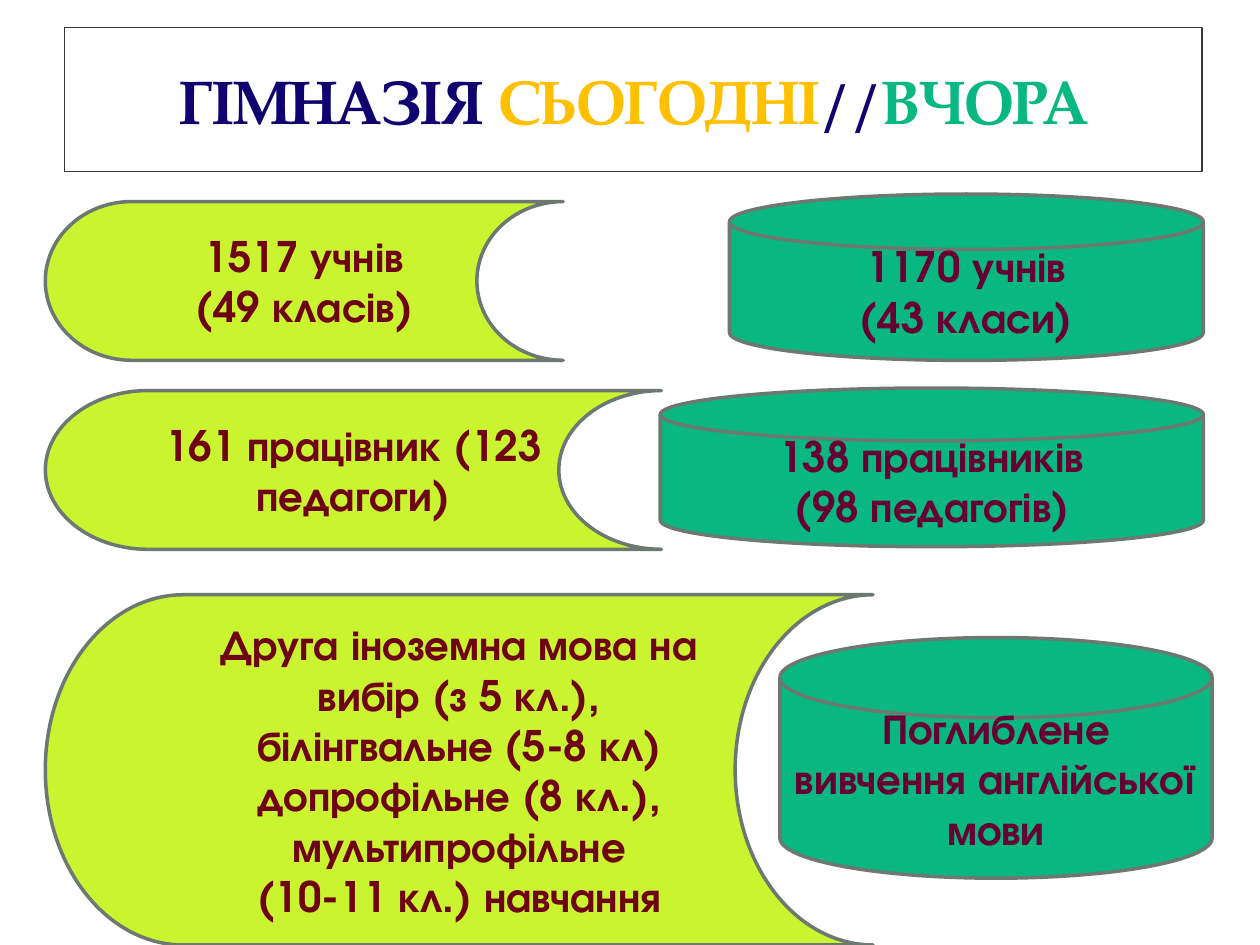
from dataclasses import dataclass

from pptx import Presentation
from pptx.dml.color import RGBColor
from pptx.enum.shapes import MSO_SHAPE
from pptx.enum.text import MSO_ANCHOR, MSO_AUTO_SIZE, PP_ALIGN
from pptx.util import Inches, Pt

TITLE_ONLY = 5


@dataclass(frozen=True)
class Theme:
    title_font: str = "TeX Gyre Pagella"
    body_font: str = "TeX Gyre Adventor"
    title_size: float = 35
    body_size: float = 24
    frame_width: float = 0.75
    outline_width: float = 2
    white: str = "FFFFFF"
    frame: str = "3C3638"
    outline: str = "6D7871"
    navy: str = "10036F"
    gold: str = "FFC000"
    green: str = "09B781"
    lime: str = "CAF430"
    maroon: str = "6E0413"
    plum: str = "660033"


THEME = Theme()

# Column edges in inches: "today" starts at the left, "yesterday" ends at the right
LEFT_EDGE = 0.36
RIGHT_EDGE = 9.55

# Each entry: top, width, height, paragraphs
TODAY = [
    (1.6, 4.11, 1.26, ["1517 учнів", "(49 класів)"]),
    (3.1, 4.89, 1.26, ["161 працівник (123 педагоги)"]),
    (4.72, 6.57, 2.78, [
        "Друга іноземна мова на вибір (з 5 кл.), білінгвальне (5-8 кл)",
        "допрофільне (8 кл.), мультипрофільне",
        "(10-11 кл.) навчання",
    ]),
]
YESTERDAY = [
    (1.54, 3.76, 1.32, ["1170 учнів", "(43 класи)"]),
    (3.08, 4.31, 1.26, ["138 працівників", "(98 педагогів)"]),
]
LANGUAGE_LEFT = 6.19
LANGUAGE = (5.06, 3.43, 1.91, ["Поглиблене вивчення англійської мови"])


def color(value):
    return RGBColor.from_string(value)


def paint(shape, fill, line, width):
    shape.fill.solid()
    shape.fill.fore_color.rgb = color(fill)
    shape.line.color.rgb = color(line)
    shape.line.width = Pt(width)


def format_paragraph(paragraph, font_name, size):
    paragraph.alignment = PP_ALIGN.CENTER
    paragraph.font.name = font_name
    paragraph.font.size = Pt(size)
    paragraph.font.bold = True


def fill_title(title, parts):
    title.left, title.top = Inches(0.51), Inches(0.22)
    title.width, title.height = Inches(9.03), Inches(1.14)
    paint(title, THEME.white, THEME.frame, THEME.frame_width)
    frame = title.text_frame
    frame.auto_size = MSO_AUTO_SIZE.NONE
    frame.vertical_anchor = MSO_ANCHOR.MIDDLE
    paragraph = frame.paragraphs[0]
    format_paragraph(paragraph, THEME.title_font, THEME.title_size)
    for text, part_color in parts:
        run = paragraph.add_run()
        run.text = text
        run.font.color.rgb = color(part_color)


def add_fact(slide, kind, left, fact, fill, text_color):
    top, width, height, lines = fact
    shape = slide.shapes.add_shape(
        kind, Inches(left), Inches(top), Inches(width), Inches(height))
    shape.shadow.inherit = False
    paint(shape, fill, THEME.outline, THEME.outline_width)
    frame = shape.text_frame
    frame.word_wrap = True
    frame.vertical_anchor = MSO_ANCHOR.MIDDLE
    frame.text = "\n".join(lines)
    for paragraph in frame.paragraphs:
        format_paragraph(paragraph, THEME.body_font, THEME.body_size)
        paragraph.font.color.rgb = color(text_color)


def add_today(slide, fact):
    add_fact(slide, MSO_SHAPE.FLOWCHART_STORED_DATA, LEFT_EDGE, fact,
             THEME.lime, THEME.maroon)


def add_yesterday(slide, left, fact):
    add_fact(slide, MSO_SHAPE.FLOWCHART_MAGNETIC_DISK, left, fact,
             THEME.green, THEME.plum)


def main():
    presentation = Presentation()
    presentation.slide_width, presentation.slide_height = Inches(10), Inches(7.5)
    slide = presentation.slides.add_slide(presentation.slide_layouts[TITLE_ONLY])

    # Heading
    fill_title(slide.shapes.title, [
        ("ГІМНАЗІЯ ", THEME.navy),
        ("СЬОГОДНІ", THEME.gold),
        ("//", THEME.navy),
        ("ВЧОРА", THEME.green),
    ])

    # Today on the left, yesterday on the right
    for fact in TODAY:
        add_today(slide, fact)
    for fact in YESTERDAY:
        add_yesterday(slide, RIGHT_EDGE - fact[1], fact)
    add_yesterday(slide, LANGUAGE_LEFT, LANGUAGE)

    presentation.save("out.pptx")


if __name__ == "__main__":
    main()
